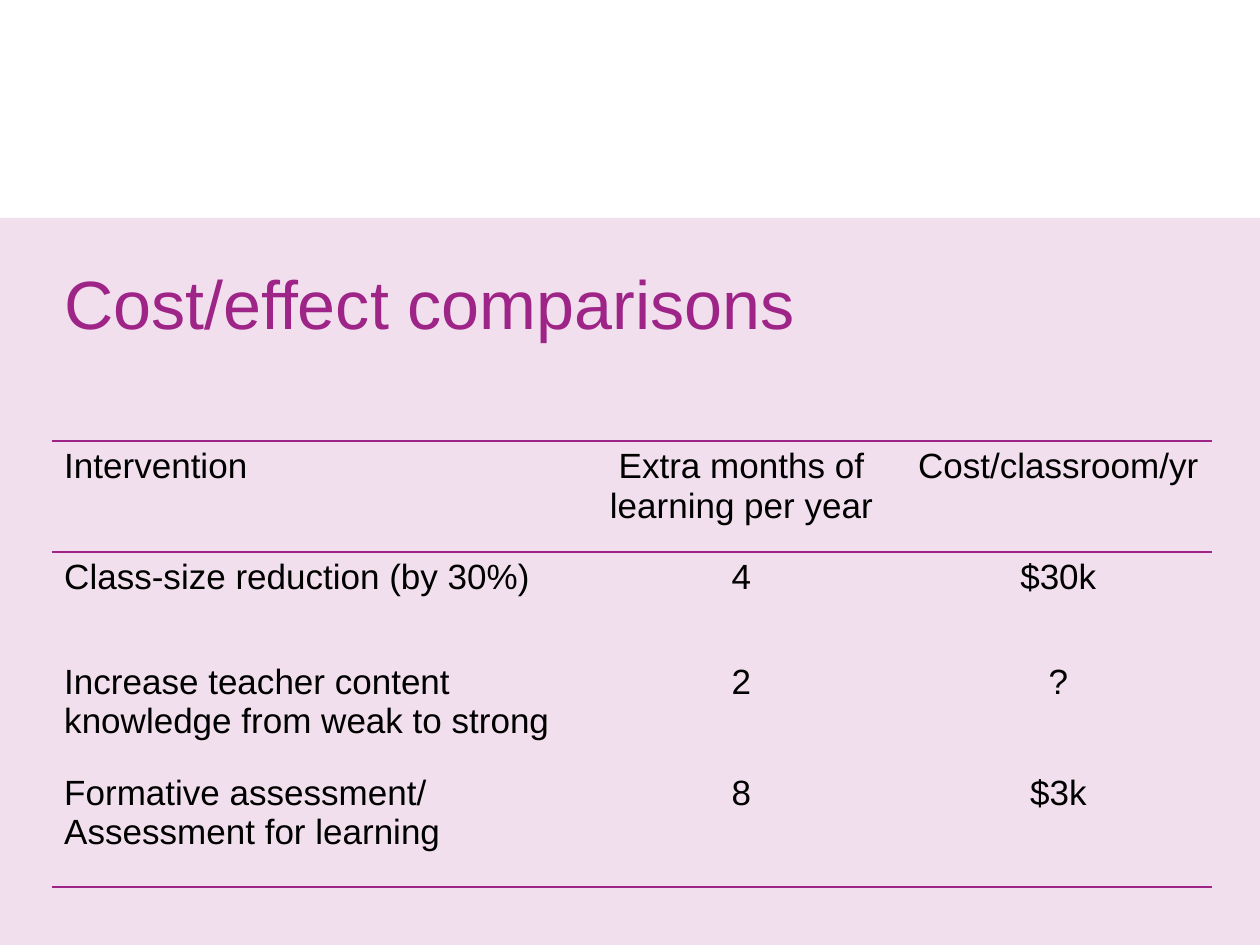
from lxml.etree import SubElement
from pptx import Presentation
from pptx.dml.color import RGBColor
from pptx.enum.shapes import MSO_SHAPE as Shape
from pptx.enum.text import MSO_ANCHOR as Anchor, PP_ALIGN as Align
from pptx.oxml.ns import qn
from pptx.util import Inches, Pt

# Content
TITLE = "Cost/effect comparisons"
ROWS = [
    ("Intervention", "Extra months of learning per year", "Cost/classroom/yr"),
    ("Class-size reduction (by 30%)", "4", "$30k"),
    ("Increase teacher content knowledge from weak to strong", "2", "?"),
    ("Formative assessment/\nAssessment for learning", "8", "$3k"),
]

# Format
WIDTH, HEIGHT = 10, 7.5
PANEL_TOP = 1.73
COLS = [4.18, 2.59, 2.44]
ROW_HEIGHTS = [0.88, 0.83, 0.88, 0.95]
PURPLE, PINK, BLACK = "9E2487", "F1DFED", "000000"
NO_STYLE = "{2D5ABB26-0587-4C30-8999-92F81FD0307C}"
RULED = {0: "TB", 1: "T", len(ROWS) - 1: "B"}  # row: sides with a rule


def color(value):
    return RGBColor.from_string(value)


def format_text(p, size, value, align=Align.LEFT):
    p.alignment = align
    for name, v in {"name": "Arial", "size": Pt(size), "bold": False}.items():
        setattr(p.font, name, v)
    p.font.color.rgb = color(value)


def set_borders(cell, sides):
    tcPr = cell._tc.get_or_add_tcPr()
    for side in "LRTB":
        ln = SubElement(tcPr, qn(f"a:ln{side}"))
        if side in sides:
            ln.set("w", str(Pt(1)))
            fill = SubElement(ln, qn("a:solidFill"))
            SubElement(fill, qn("a:srgbClr")).set("val", PURPLE)
        else:
            SubElement(ln, qn("a:noFill"))


prs = Presentation()
prs.slide_width, prs.slide_height = Inches(WIDTH), Inches(HEIGHT)
s = prs.slides.add_slide(prs.slide_layouts[5])

# Tinted panel, behind the title
panel = s.shapes.add_shape(Shape.RECTANGLE, 0, Inches(PANEL_TOP), Inches(WIDTH),
                           Inches(HEIGHT - PANEL_TOP))
panel.shadow.inherit = False
panel.fill.solid()
panel.fill.fore_color.rgb = color(PINK)
panel.line.fill.background()
s.shapes._spTree.insert(2, panel._element)

# Title
title = s.shapes.title
title.left, title.top, title.width, title.height = map(Inches, (0.51, 2.05, 9.14, 0.7))
tf = title.text_frame
for side in ("left", "right", "top", "bottom"):
    setattr(tf, f"margin_{side}", 0)
tf.vertical_anchor = Anchor.MIDDLE
tf.text = TITLE
format_text(tf.paragraphs[0], 39, PURPLE)

# Table
table = s.shapes.add_table(len(ROWS), len(COLS), Inches(0.41), Inches(3.5),
                           Inches(sum(COLS)), Inches(sum(ROW_HEIGHTS))).table
table.first_row = table.horz_banding = False
table._tbl.tblPr.find(qn("a:tableStyleId")).text = NO_STYLE
for column, width in zip(table.columns, COLS):
    column.width = Inches(width)
for r, (row, height) in enumerate(zip(ROWS, ROW_HEIGHTS)):
    table.rows[r].height = Inches(height)
    for c, text in enumerate(row):
        cell = table.cell(r, c)
        cell.text = text
        set_borders(cell, RULED.get(r, ""))
        cell.fill.background()
        for p in cell.text_frame.paragraphs:
            format_text(p, 20, BLACK, Align.CENTER if c else Align.LEFT)

prs.save("out.pptx")
